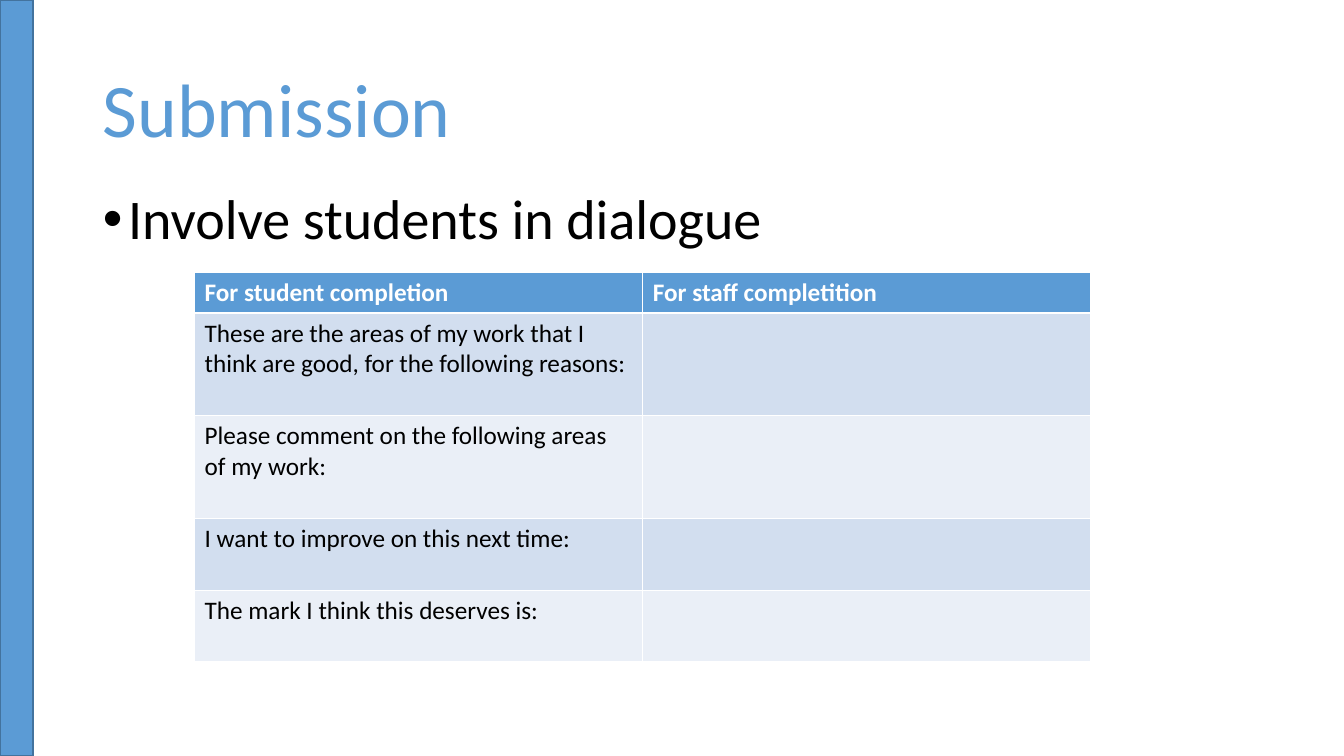
from lxml import etree
from pptx import Presentation
from pptx.dml.color import RGBColor
from pptx.enum.shapes import MSO_SHAPE
from pptx.enum.text import MSO_ANCHOR, MSO_AUTO_SIZE, PP_ALIGN
from pptx.oxml.ns import qn
from pptx.util import Inches, Pt

RECT = MSO_SHAPE.RECTANGLE
TOP, MIDDLE = MSO_ANCHOR.TOP, MSO_ANCHOR.MIDDLE
FIXED = MSO_AUTO_SIZE.NONE
LEFT = PP_ALIGN.LEFT

FONT = "Calibri"
BLUE, EDGE, BLACK, WHITE = "5B9BD5", "43739E", "000000", "FFFFFF"
BANDS = ["D2DEEF", "EAEFF7"]

HEADS = ["For student completion", "For staff completition"]
# Prompt for the student and height of its row
PROMPTS = [
    ("These are the areas of my work that I think are good, "
     "for the following reasons:", 1.02),
    ("Please comment on the following areas of my work:", 1.02),
    ("I want to improve on this next time:", 0.71),
    ("The mark I think this deserves is:", 0.71),
]


def paint(fmt, color):
    """Fill a shape, line or cell with a solid colour."""
    fmt.solid()
    fmt.fore_color.rgb = RGBColor.from_string(color)


def style(para, size, color, bold=False):
    for run in para.runs:
        font = run.font
        font.name, font.size, font.bold = FONT, Pt(size), bold
        font.color.rgb = RGBColor.from_string(color)


def place(shape, left, top, width, height):
    shape.left, shape.top = Inches(left), Inches(top)
    shape.width, shape.height = Inches(width), Inches(height)


def add_bar(slide):
    bar = slide.shapes.add_shape(RECT, 0, 0, Inches(0.33), Inches(7.5))
    bar.shadow.inherit = False
    paint(bar.fill, BLUE)
    paint(bar.line.fill, EDGE)
    bar.line.width = Pt(1)


def fill_holder(shape, text, box, anchor, size, color):
    """Move a placeholder and set its single paragraph."""
    place(shape, *box)
    frame = shape.text_frame
    frame.text = text
    frame.word_wrap = True
    frame.auto_size = FIXED
    frame.vertical_anchor = anchor
    para = frame.paragraphs[0]
    para.alignment = LEFT
    para.line_spacing = 0.9
    para.space_before = Pt(0)
    style(para, size, color)
    return para


def add_bullet(para, indent):
    props = para._p.get_or_add_pPr()
    props.set("marL", str(Inches(indent)))
    props.set("indent", str(-Inches(indent)))
    etree.SubElement(props, qn("a:buFont")).set("typeface", "Arial")
    etree.SubElement(props, qn("a:buChar")).set("char", "•")


def set_cell(cell, text, fill, color, bold):
    paint(cell.fill, fill)
    if text:
        cell.text = text
        style(cell.text_frame.paragraphs[0], 18, color, bold)


def add_form(slide):
    heights = [0.4] + [height for _, height in PROMPTS]
    frame = slide.shapes.add_table(
        len(heights), len(HEADS), Inches(1.93), Inches(2.7),
        Inches(8.89), Inches(sum(heights)))
    table = frame.table
    for row, height in zip(table.rows, heights):
        row.height = Inches(height)
    for col, head in enumerate(HEADS):
        set_cell(table.cell(0, col), head, BLUE, WHITE, True)
    # The staff column stays blank
    for num, (prompt, _) in enumerate(PROMPTS):
        for col, text in enumerate([prompt, ""]):
            set_cell(table.cell(num + 1, col), text, BANDS[num % 2],
                     BLACK, False)


def main():
    deck = Presentation()
    deck.slide_width, deck.slide_height = Inches(13.33), Inches(7.5)
    slide = deck.slides.add_slide(deck.slide_layouts[1])

    # Side bar
    add_bar(slide)

    # Title and list
    title, body = slide.placeholders
    fill_holder(title, "Submission", (0.92, 0.4, 11.5, 1.45),
                MIDDLE, 54, BLUE)
    point = fill_holder(body, "Involve students in dialogue",
                        (0.92, 1.85, 11.5, 4.76), TOP, 40, BLACK)
    add_bullet(point, 0.25)

    # Feedback form
    add_form(slide)
    deck.save("out.pptx")


if __name__ == "__main__":
    main()
